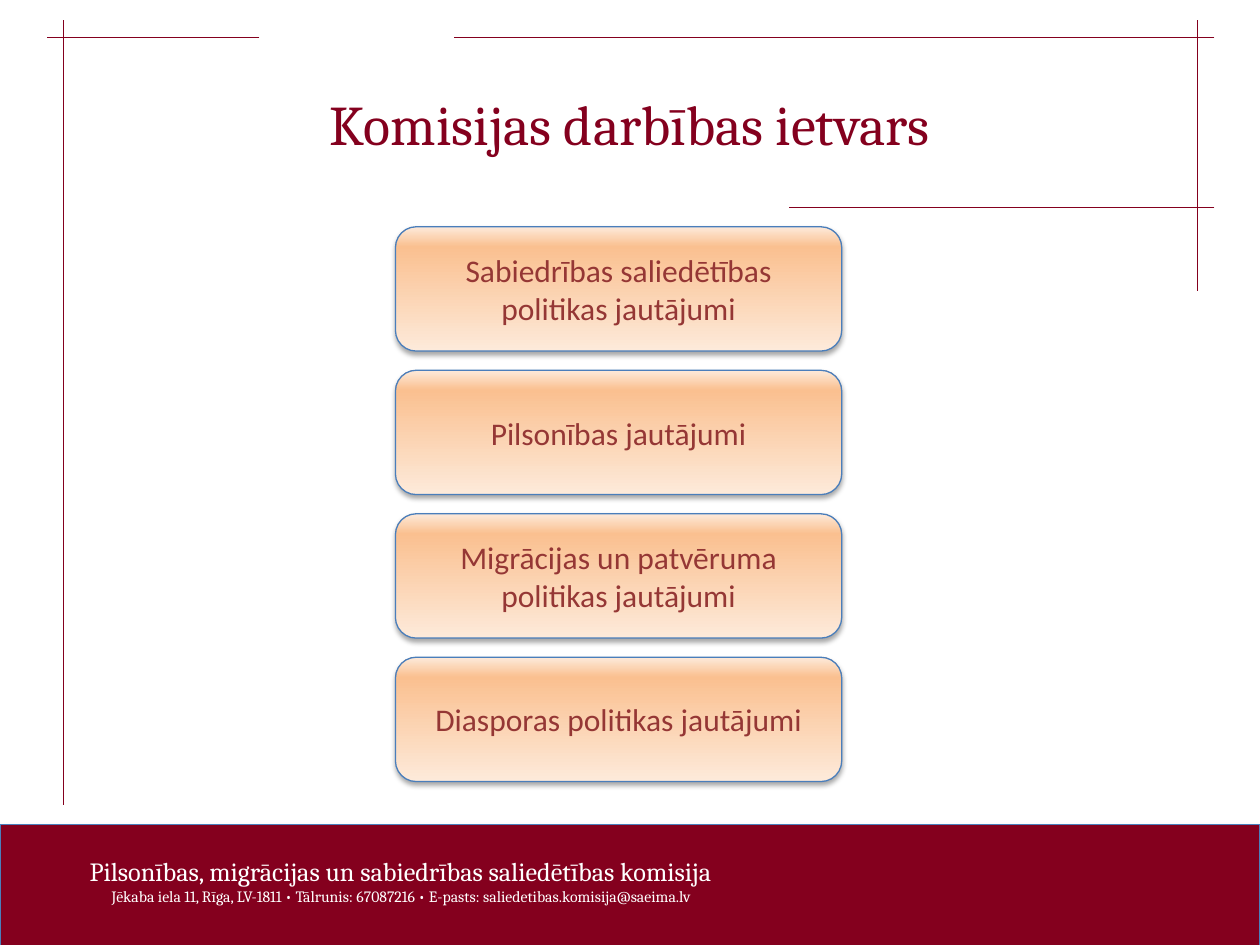
from copy import deepcopy
from dataclasses import dataclass

from lxml.etree import SubElement
from pptx import Presentation
from pptx.dml.color import RGBColor
from pptx.enum.shapes import MSO_CONNECTOR, MSO_SHAPE
from pptx.enum.text import MSO_ANCHOR, PP_ALIGN
from pptx.oxml.ns import qn
from pptx.util import Pt


@dataclass(frozen=True)
class Theme:
    wine: str = "84001E"
    white: str = "FFFFFF"
    outline: str = "4A7EBB"
    card_text: str = "953735"
    card_stops: tuple = ((0, "FDEADA"), (0.84, "FAC090"), (1, "FDEADA"))
    card_shadow: str = "000000"
    footer_shadow: str = "808080"
    serif: str = "Cambria"
    sans: str = "Calibri"
    title_size: float = 32
    card_size: float = 18
    committee_size: float = 15
    contact_size: float = 9
    rule_width: float = 0.5
    outline_width: float = 0.75


THEME = Theme()

TITLE = "Komisijas darbības ietvars"
TOPICS = (
    "Sabiedrības saliedētības politikas jautājumi",
    "Pilsonības jautājumi",
    "Migrācijas un patvēruma politikas jautājumi",
    "Diasporas politikas jautājumi",
)
COMMITTEE = "Pilsonības, migrācijas un sabiedrības saliedētības komisija"
CONTACT = (
    "Jēkaba iela 11, Rīga, LV-1811 • Tālrunis: 67087216 • "
    "E-pasts: saliedetibas.komisija@saeima.lv"
)
RULES = (
    (36, 11.5, 36, 460),
    (148.3, 21.6, 26.6, 21.6),
    (694, 21.6, 259.2, 21.6),
    (684, 11.5, 684, 166.3),
    (694, 118.8, 450.7, 118.8),
)


def rgb(color):
    return RGBColor.from_string(color)


def style_paragraph(paragraph, font_name, size, color):
    paragraph.alignment = PP_ALIGN.CENTER
    for run in paragraph.runs:
        run.font.name = font_name
        run.font.size = Pt(size)
        run.font.color.rgb = rgb(color)


def add_rule(slide, *ends):
    rule = slide.shapes.add_connector(MSO_CONNECTOR.STRAIGHT, *map(Pt, ends))
    rule.line.color.rgb = rgb(THEME.wine)
    rule.line.width = Pt(THEME.rule_width)
    SubElement(rule._element.spPr, qn("a:effectLst"))


def add_outline_and_shadow(panel, shadow_color):
    panel.line.color.rgb = rgb(THEME.outline)
    panel.line.width = Pt(THEME.outline_width)
    panel.shadow.inherit = False
    effects = panel._element.spPr.find(qn("a:effectLst"))
    shadow = SubElement(
        effects, qn("a:outerShdw"), blurRad=str(Pt(3.1)), dist=str(Pt(1.8)),
        dir="5400000", rotWithShape="0",
    )
    tint = SubElement(shadow, qn("a:srgbClr"), val=shadow_color)
    SubElement(tint, qn("a:alpha"), val="35000")


def fill_with_gradient(fill, colors):
    fill.gradient()
    fill.gradient_angle = 90
    stop_list = fill._xPr.find(qn("a:gradFill")).find(qn("a:gsLst"))
    stop_list.append(deepcopy(stop_list[-1]))
    for stop, (position, color) in zip(fill.gradient_stops, colors):
        stop.position = position
        stop.color.rgb = rgb(color)


def add_title(slide):
    title = slide.shapes.add_textbox(Pt(36), Pt(21.6), Pt(648), Pt(97.2))
    frame = title.text_frame
    frame.word_wrap = True
    frame.vertical_anchor = MSO_ANCHOR.MIDDLE
    frame.text = TITLE
    style_paragraph(frame.paragraphs[0], THEME.serif, THEME.title_size, THEME.wine)


def add_card(slide, topic, top):
    card = slide.shapes.add_shape(
        MSO_SHAPE.ROUNDED_RECTANGLE, Pt(226), Pt(top), Pt(255), Pt(71)
    )
    fill_with_gradient(card.fill, THEME.card_stops)
    add_outline_and_shadow(card, THEME.card_shadow)
    frame = card.text_frame
    frame.word_wrap = True
    frame.vertical_anchor = MSO_ANCHOR.MIDDLE
    frame.text = topic
    style_paragraph(frame.paragraphs[0], THEME.sans, THEME.card_size, THEME.card_text)


def add_footer(slide):
    band = slide.shapes.add_shape(
        MSO_SHAPE.RECTANGLE, Pt(0), Pt(471), Pt(720), Pt(69.5)
    )
    band.fill.solid()
    band.fill.fore_color.rgb = rgb(THEME.wine)
    add_outline_and_shadow(band, THEME.footer_shadow)

    address = slide.shapes.add_textbox(Pt(16.5), Pt(485.3), Pt(425), Pt(49.7))
    frame = address.text_frame
    frame.word_wrap = False
    frame.text = COMMITTEE
    frame.add_paragraph().text = CONTACT
    sizes = (THEME.committee_size, THEME.contact_size)
    for paragraph, size in zip(frame.paragraphs, sizes):
        style_paragraph(paragraph, THEME.serif, size, THEME.white)


def main():
    deck = Presentation()
    deck.slide_width = Pt(720)
    deck.slide_height = Pt(540)
    slide = deck.slides.add_slide(deck.slide_layouts[6])

    for ends in RULES:
        add_rule(slide, *ends)
    add_footer(slide)
    add_title(slide)
    for row, topic in enumerate(TOPICS):
        add_card(slide, topic, 129.6 + 82 * row)

    deck.save("out.pptx")


if __name__ == "__main__":
    main()
